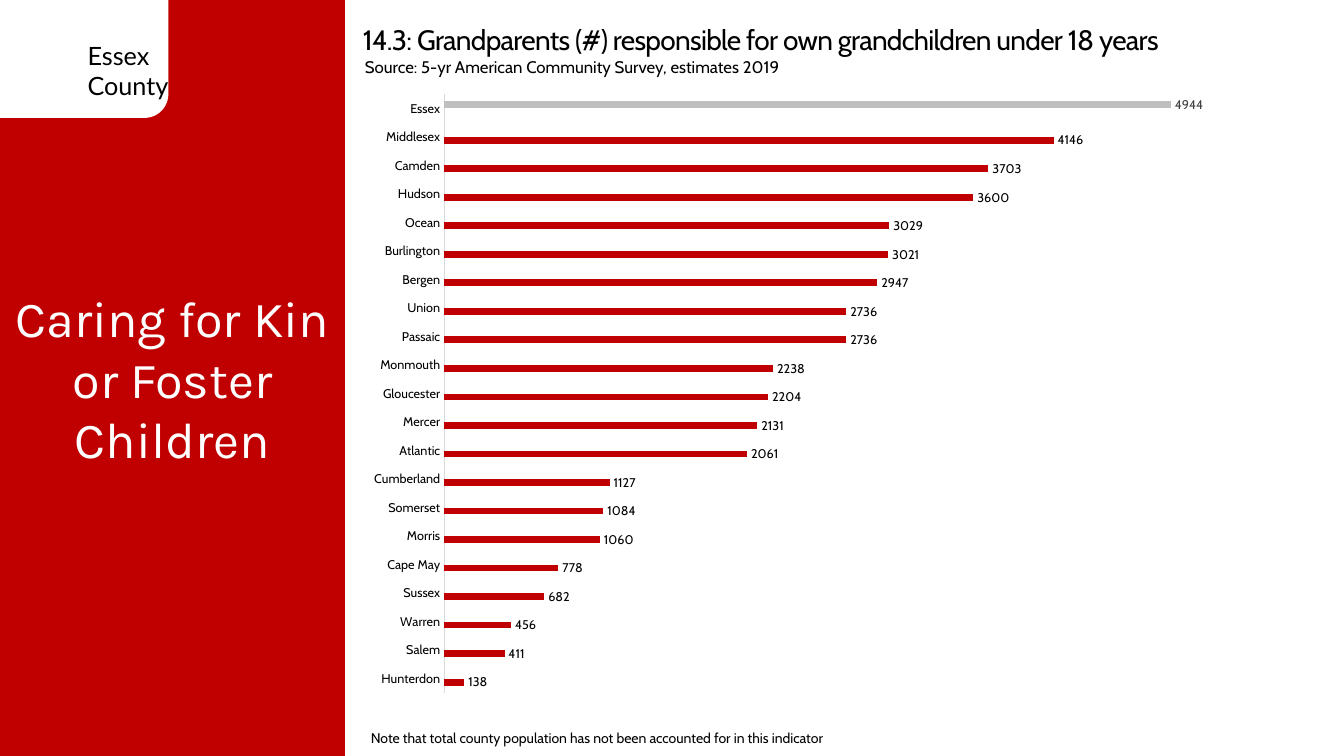
import pptx
import pptx.chart.data
import pptx.dml.color
import pptx.enum.chart
import pptx.enum.shapes
import pptx.enum.text
import pptx.oxml
import pptx.oxml.ns
import pptx.util

Inches = pptx.util.Inches
Pt = pptx.util.Pt
RGBColor = pptx.dml.color.RGBColor
Align = pptx.enum.text.PP_ALIGN
Shape = pptx.enum.shapes.MSO_SHAPE
Kind = pptx.enum.chart

RED = RGBColor(0xC0, 0x00, 0x00)
WHITE = RGBColor(0xFF, 0xFF, 0xFF)
BLACK = RGBColor(0x00, 0x00, 0x00)
SILVER = RGBColor(0xBF, 0xBF, 0xBF)
SLATE = RGBColor(0x40, 0x40, 0x40)
PALE = RGBColor(0xD9, 0xD9, 0xD9)


def style(font, face, size, color):
    font.name = face
    font.size = Pt(size)
    font.color.rgb = color


def write(box, place, text, face, size, color=BLACK, align=Align.LEFT, wrap=True):
    box.left, box.top, box.width, box.height = [Inches(n) for n in place]
    frame = box.text_frame
    frame.text = text
    frame.word_wrap = wrap
    frame.auto_size = pptx.enum.text.MSO_AUTO_SIZE.NONE
    frame.vertical_anchor = pptx.enum.text.MSO_ANCHOR.TOP
    for para in frame.paragraphs:
        para.alignment = align
        para.line_spacing = 1.0
        for run in para.runs:
            style(run.font, face, size, color)


deck = pptx.Presentation()
deck.slide_width = Inches(13.33)
deck.slide_height = Inches(7.5)
slide = deck.slides.add_slide(deck.slide_layouts[5])
shapes = slide.shapes

panels = [
    (Shape.RECTANGLE, (0, 0, 3.42, 7.5), RED),
    (Shape.ROUNDED_RECTANGLE, (-0.33, -0.25, 2, 1.42), WHITE),
]
for form, place, color in panels:
    panel = shapes.add_shape(form, *[Inches(n) for n in place])
    panel.shadow.inherit = False
    panel.fill.solid()
    panel.fill.fore_color.rgb = color
    panel.line.fill.background()

title = shapes.title
write(title, (3.5, 0.17, 9.75, 0.44),
      "14.3: Grandparents (#) responsible for own grandchildren under 18 years",
      "Cabin", 20)
title.text_frame.paragraphs[0].runs[0].font._element.set("spc", "-50")

texts = [
    ((0.77, 0.35, 1, 0.71), "Essex\nCounty", "Lato", 18, BLACK, Align.LEFT, False),
    ((3.52, 0.51, 7.05, 0.3), "Source: 5-yr American Community Survey, estimates 2019",
     "Cabin", 12),
    ((3.58, 7.19, 9.33, 0.27),
     "Note that total county population has not been accounted for in this indicator",
     "Cabin", 10),
    ((0, 2.8, 3.42, 1.92), "Caring for Kin or Foster Children",
     "Karla", 36, WHITE, Align.CENTER),
]
for place, *rest in texts:
    write(shapes.add_textbox(0, 0, 0, 0), place, *rest)

counts = {
    "Hunterdon": 138, "Salem": 411, "Warren": 456, "Sussex": 682,
    "Cape May": 778, "Morris": 1060, "Somerset": 1084, "Cumberland": 1127,
    "Atlantic": 2061, "Mercer": 2131, "Gloucester": 2204, "Monmouth": 2238,
    "Passaic": 2736, "Union": 2736, "Bergen": 2947, "Burlington": 3021,
    "Ocean": 3029, "Hudson": 3600, "Camden": 3703, "Middlesex": 4146,
    "Essex": 4944,
}
data = pptx.chart.data.CategoryChartData()
data.categories = list(counts)
data.add_series("Series 1", [None if c == "Essex" else n for c, n in counts.items()])
data.add_series("Series 2", [n if c == "Essex" else None for c, n in counts.items()])
chart = shapes.add_chart(
    Kind.XL_CHART_TYPE.BAR_CLUSTERED,
    Inches(3.52), Inches(0.81), Inches(9.83), Inches(6.19), data).chart
chart.has_legend = False
chart.has_title = False
style(chart.font, "Calibri", 10, BLACK)

axis = chart.category_axis
axis.major_tick_mark = Kind.XL_TICK_MARK.NONE
axis.format.line.color.rgb = PALE
axis.format.line.width = Pt(0.75)
style(axis.tick_labels.font, "Cabin", 9, BLACK)
scale = chart.value_axis
scale.visible = False
scale.has_major_gridlines = False
scale.minimum_scale = 0
scale.maximum_scale = 6000

plot = chart.plots[0]
plot.gap_width = 219
plot.overlap = 0
plot.vary_by_categories = False
for series, fill, ink in zip(plot.series, (RED, SILVER), (BLACK, SLATE)):
    series.format.fill.solid()
    series.format.fill.fore_color.rgb = fill
    labels = series.data_labels
    labels.show_value = True
    labels.position = Kind.XL_LABEL_POSITION.OUTSIDE_END
    style(labels.font, "Cabin", 9, ink)

area = chart._chartSpace.chart.plotArea
for old in area.findall(pptx.oxml.ns.qn("c:layout")):
    area.remove(old)
area.insert(0, pptx.oxml.parse_xml(
    f'<c:layout {pptx.oxml.ns.nsdecls("c")}><c:manualLayout>'
    '<c:layoutTarget val="inner"/><c:xMode val="edge"/><c:yMode val="edge"/>'
    '<c:x val="0.09"/><c:y val="0.02"/><c:w val="0.89"/><c:h val="0.96"/>'
    '</c:manualLayout></c:layout>'))

deck.save("out.pptx")
